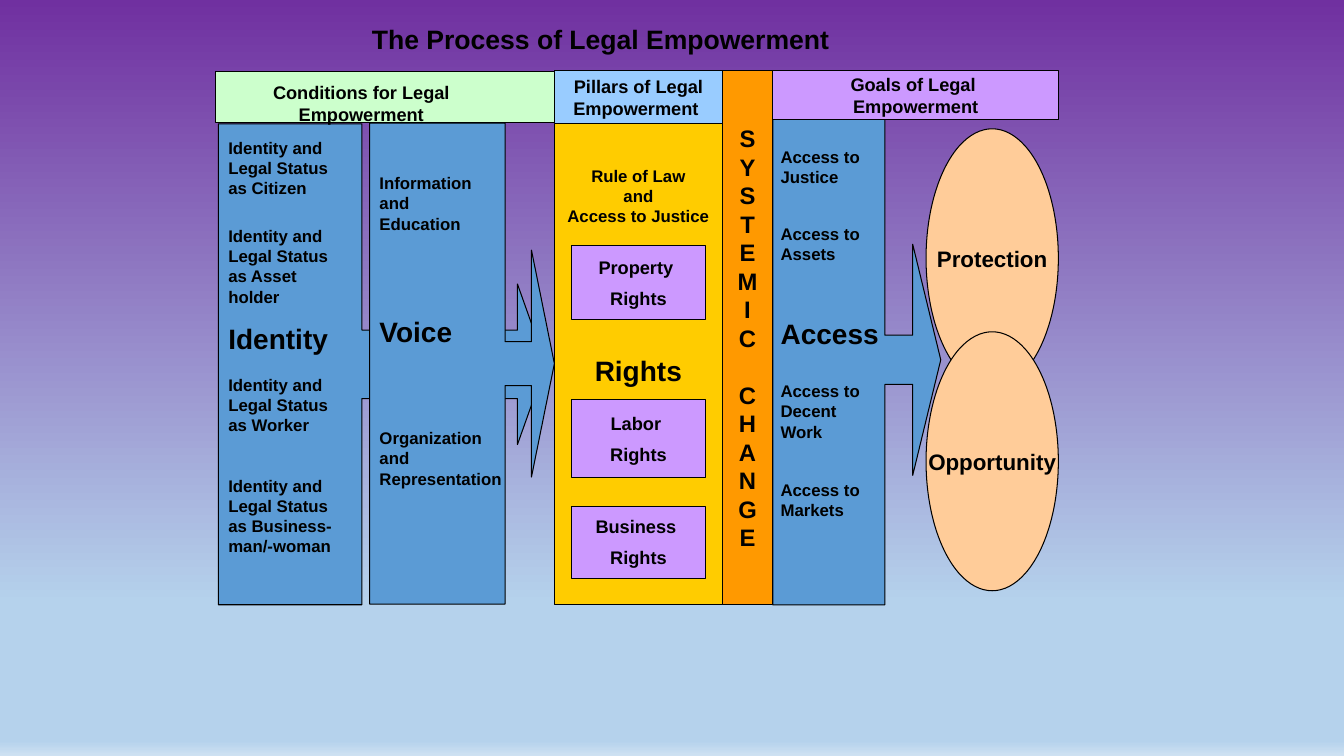
from lxml import etree
from pptx import Presentation
from pptx.dml.color import RGBColor
from pptx.enum import shapes, text
from pptx.oxml import ns
from pptx.util import Pt

THEME = {
    "ink": "000000", "blue": "5B9BD5", "mint": "CCFFCC", "sky": "99CCFF",
    "gold": "FFCC00", "lilac": "CC99FF", "peach": "FFCC99", "orange": "FF9900",
    "font": "Arial", "edge": 0.75, "lead": 1.2,
    "title": 19, "big": 20, "tall": 17, "goal": 16, "head": 13, "body": 12,
    "back": [(0, "7030A0"), (80, "B5D2EC"), (98, "B5D2EC"), (100, "CEE1F2")],
}

# Content: a paragraph is (space before, size name, words)
TITLE = [(0, "title", "The Process of Legal Empowerment")]
CONDS = [(0, "head", "Conditions for Legal Empowerment")]
PILLARS = [(0, "head", "Pillars of Legal Empowerment ")]
GOALS = [(0, "head", "Goals of Legal \nEmpowerment")]
CHANGE = [(0, "tall", "\n".join("SYSTEMIC")), (20.4, "tall", "\n".join("CHANGE"))]
RULE = [(0, "body", "Rule of Law\nand\nAccess to Justice"), (90.5, "big", "Rights")]

# Callout arrows, back to front: left, top, width, height, adjustments
ARROWS = [
    (156, 88.5, 234, 343.5, (0.209, 0.245, 0.087, 0.438)),
    (552, 82, 120, 350, (0.294, 0.688, 0.167, 0.667)),
    (264, 88, 132, 343.5, (0.238, 0.614, 0.124, 0.733)),
]

# Columns of words over the arrows: left, top, width, height, paragraphs
COLUMNS = [
    (156, 94.5, 101.5, 312, [
        (0, "body", "Identity and Legal Status as Citizen"),
        (20, "body", "Identity and Legal Status as Asset holder"),
        (10.5, "big", "Identity"),
        (14, "body", "Identity and Legal Status as Worker"),
        (29, "body", "Identity and Legal Status as Business-man/-woman")]),
    (264, 120, 125, 243, [
        (0, "body", "Information \nand \nEducation"),
        (58, "big", "Voice"),
        (57, "body", "Organization \nand \nRepresentation")]),
    (550.5, 101, 86, 287, [
        (0, "body", "Access to Justice"),
        (26.5, "body", "Access to Assets"),
        (37.5, "big", "Access"),
        (22, "body", "Access to Decent Work"),
        (27, "body", "Access to Markets")]),
]
RIGHTS = [("Property ", 175.5, 53), ("Labor ", 285.5, 55.5), ("Business ", 361.5, 51.5)]
AIMS = [("Protection", 92), ("Opportunity", 237)]

BOX = shapes.MSO_SHAPE.RECTANGLE
OVAL = shapes.MSO_SHAPE.OVAL
ARROW = shapes.MSO_SHAPE.RIGHT_ARROW_CALLOUT
LEFT, MID = text.PP_ALIGN.LEFT, text.PP_ALIGN.CENTER
TOP, CORE = text.MSO_ANCHOR.TOP, text.MSO_ANCHOR.MIDDLE

deck = Presentation()
deck.slide_width, deck.slide_height = Pt(960), Pt(540)
slide = deck.slides.add_slide(deck.slide_layouts[6])


def color(name):
    return RGBColor.from_string(THEME[name])


def write(shape, paras, align=MID, anchor=CORE, wrap=True, inset=3.6):
    frame = shape.text_frame
    frame.word_wrap, frame.vertical_anchor = wrap, anchor
    frame.margin_left = frame.margin_right = Pt(7.2)
    frame.margin_top, frame.margin_bottom = Pt(inset), Pt(3.6)
    for i, (gap, size, words) in enumerate(paras):
        para = frame.add_paragraph() if i else frame.paragraphs[0]
        para.text, para.alignment = words, align
        para.space_before = Pt(gap)
        para.line_spacing = Pt(THEME[size] * THEME["lead"])
        font = para.font
        font.name, font.size, font.bold = THEME["font"], Pt(THEME[size]), True
        font.color.rgb = color("ink")


def draw(kind, area, fill):
    shape = slide.shapes.add_shape(kind, *map(Pt, area))
    shape.shadow.inherit = False
    shape.fill.solid()
    shape.fill.fore_color.rgb = color(fill)
    shape.line.color.rgb = color("ink")
    shape.line.width = Pt(THEME["edge"])
    return shape


def label(area, paras, **opts):
    write(slide.shapes.add_textbox(*map(Pt, area)), paras, **opts)


# Background gradient, top to bottom
fill = slide.background.fill
fill.gradient()
fill.gradient_angle = 270
stops = slide.element.find(".//" + ns.qn("a:gsLst"))
for stop in list(stops):
    stops.remove(stop)
for pos, tone in THEME["back"]:
    stop = etree.SubElement(stops, ns.qn("a:gs"), pos=str(pos * 1000))
    etree.SubElement(stop, ns.qn("a:srgbClr"), val=tone)

# Arrows and their words
for *area, adjs in ARROWS:
    arrow = draw(ARROW, area, "blue")
    for i, adj in enumerate(adjs):
        arrow.adjustments[i] = adj
for *area, paras in COLUMNS:
    label(area, paras, align=LEFT, anchor=TOP)

# Title and conditions header
draw(BOX, (154, 51, 242, 36.5), "mint")
label((156, 50, 204, 48), CONDS)
label((144, 12.5, 570, 30), TITLE, anchor=TOP)

# Pillars
write(draw(BOX, (396, 88.5, 120, 343.5), "gold"), RULE, anchor=TOP, inset=30)
for name, top, high in RIGHTS:
    write(draw(BOX, (408, top, 96, high), "lilac"),
          [(0, "head", name), (6.5, "head", "Rights")])
write(draw(BOX, (396, 50.5, 120, 38), "sky"), PILLARS)

# Goals and systemic change
for name, top in AIMS:
    write(draw(OVAL, (661.5, top, 94.5, 185), "peach"), [(0, "goal", name)], wrap=False)
write(draw(BOX, (552, 50.5, 204, 35), "lilac"), GOALS, wrap=False)
write(draw(BOX, (516, 50.5, 36, 381.5), "orange"), CHANGE, wrap=False)

deck.save("out.pptx")
